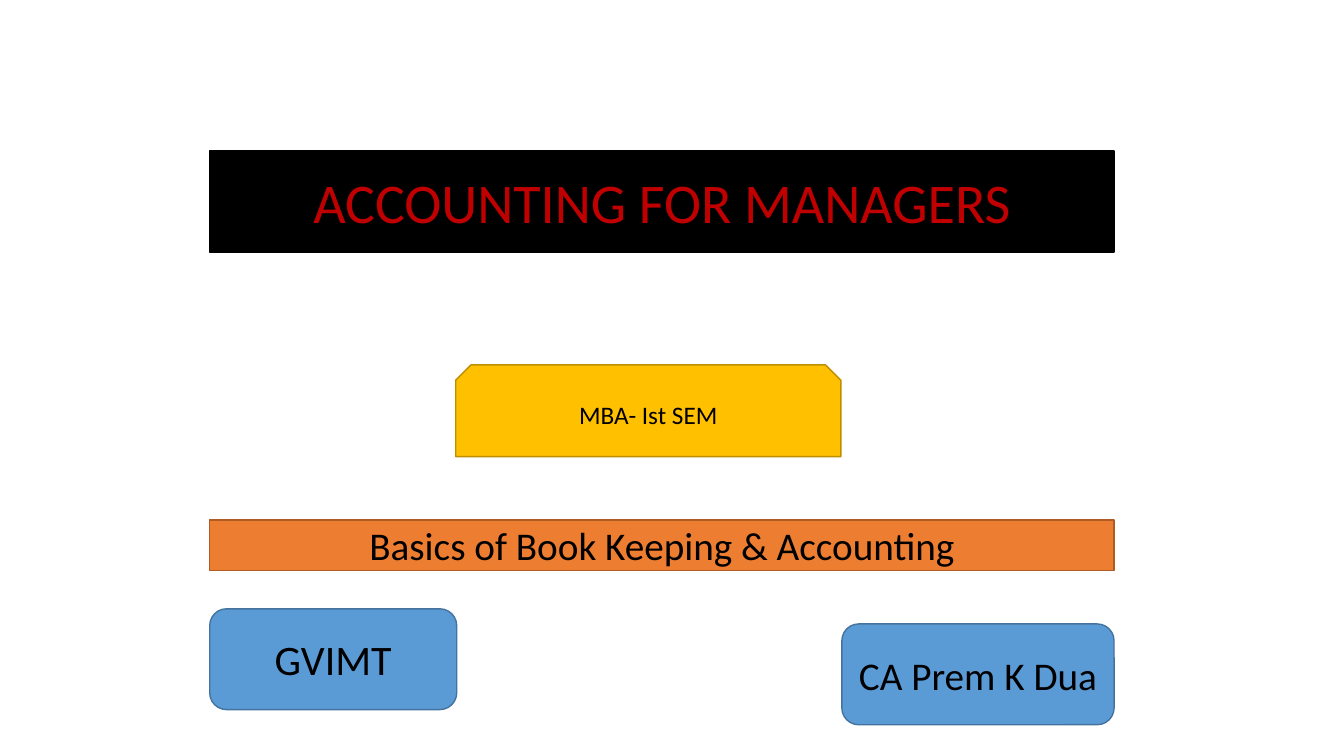
"""Builds the title slide of an accounting course."""
from pptx import Presentation
from pptx.dml.color import RGBColor
from pptx.enum.shapes import MSO_SHAPE as Shape
from pptx.enum.text import MSO_ANCHOR as Anchor, PP_ALIGN as Align
from pptx.util import Inches, Pt

BLACK = RGBColor(0x00, 0x00, 0x00)
RED = RGBColor(0xC0, 0x00, 0x00)
GOLD = RGBColor(0xFF, 0xC0, 0x00)
DARK_GOLD = RGBColor(0xBD, 0x8E, 0x00)
ORANGE = RGBColor(0xED, 0x7D, 0x31)
DARK_ORANGE = RGBColor(0xAF, 0x5C, 0x24)
BLUE = RGBColor(0x5B, 0x9B, 0xD5)
DARK_BLUE = RGBColor(0x43, 0x73, 0x9E)

FONT = "Calibri"
LEFT, WIDTH = 2.08, 8.97
AUTHOR_WIDTH = 2.7
AUTHOR_LEFT = LEFT + WIDTH - AUTHOR_WIDTH

BOXES = [
    ("ACCOUNTING FOR MANAGERS", dict(
        kind=Shape.RECTANGLE, place=(LEFT, 1.5, WIDTH, 1),
        fill=BLACK, line=BLACK, size=40, color=RED)),
    ("MBA- Ist SEM", dict(
        kind=Shape.SNIP_2_SAME_RECTANGLE, place=(4.52, 3.62, 3.82, 0.91),
        fill=GOLD, line=DARK_GOLD, size=18)),
    ("GVIMT", dict(
        kind=Shape.ROUNDED_RECTANGLE, place=(LEFT, 6.04, 2.45, 1),
        fill=BLUE, line=DARK_BLUE, size=30)),
    ("CA Prem K Dua", dict(
        kind=Shape.ROUNDED_RECTANGLE, place=(AUTHOR_LEFT, 6.19, AUTHOR_WIDTH, 1),
        fill=BLUE, line=DARK_BLUE, size=28)),
    ("Basics of Book Keeping & Accounting", dict(
        kind=Shape.RECTANGLE, place=(LEFT, 5.16, WIDTH, 0.5),
        fill=ORANGE, line=DARK_ORANGE, size=28)),
]


def add_box(page, text, *, kind, place, fill, line, size, color=BLACK):
    box = page.shapes.add_shape(kind, *map(Inches, place))
    box.shadow.inherit = False
    box.fill.solid()
    box.fill.fore_color.rgb = fill
    box.line.color.rgb = line
    box.line.width = Pt(1)
    frame = box.text_frame
    frame.word_wrap = True
    frame.vertical_anchor = Anchor.MIDDLE
    para = frame.paragraphs[0]
    para.alignment = Align.CENTER
    span = para.add_run()
    span.text = text
    span.font.name = FONT
    span.font.size = Pt(size)
    span.font.color.rgb = color


def main():
    deck = Presentation()
    deck.slide_width, deck.slide_height = Inches(13.33), Inches(7.5)
    page = deck.slides.add_slide(deck.slide_layouts[6])
    for text, style in BOXES:
        add_box(page, text, **style)
    deck.save("out.pptx")


if __name__ == "__main__":
    main()
